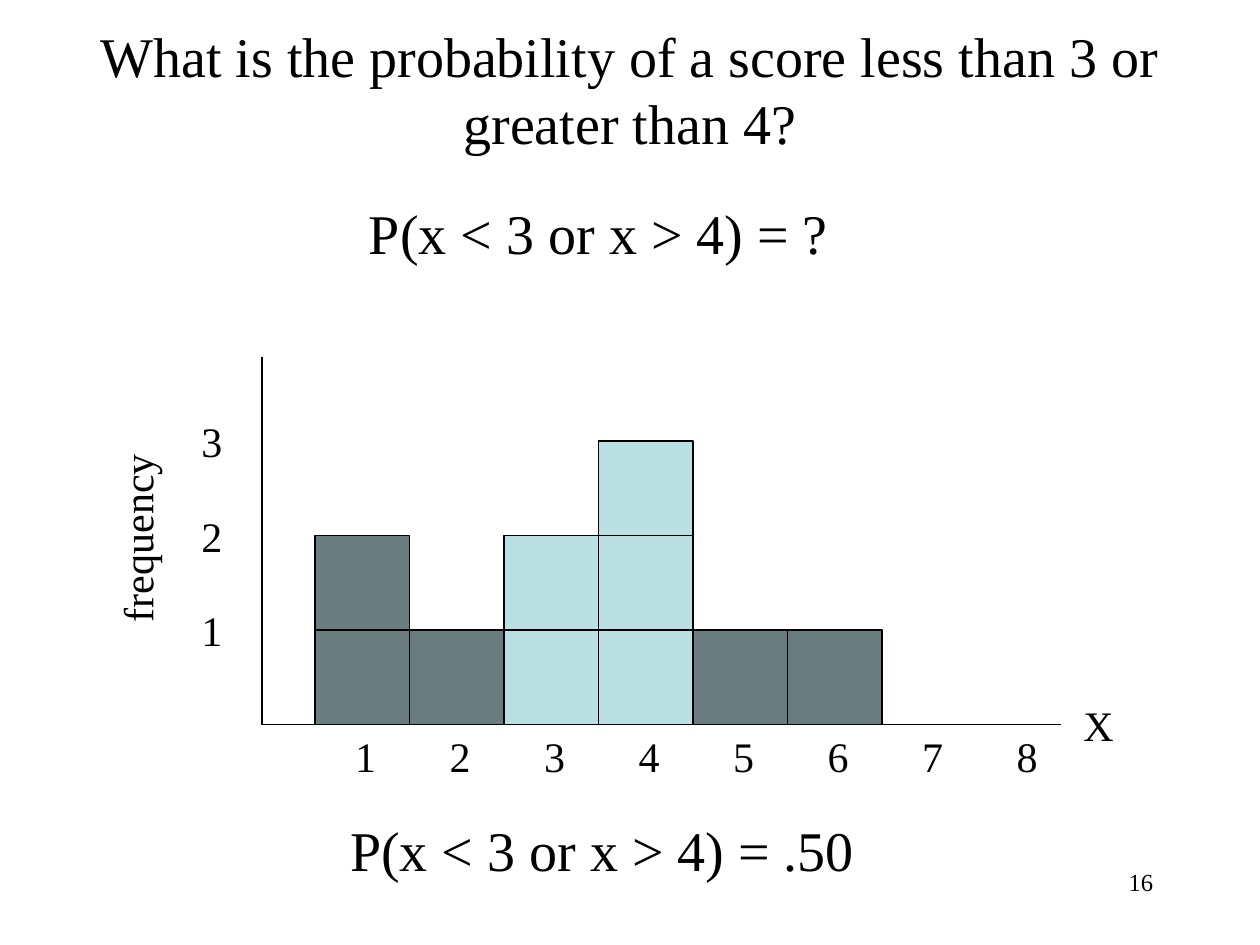
from dataclasses import dataclass

from lxml import etree
from pptx import Presentation
from pptx.dml.color import RGBColor
from pptx.enum.shapes import MSO_CONNECTOR, MSO_SHAPE
from pptx.enum.text import MSO_ANCHOR, MSO_AUTO_SIZE, PP_ALIGN
from pptx.oxml.ns import qn
from pptx.util import Inches, Pt


@dataclass(frozen=True)
class Theme:
    font: str = "Times New Roman"
    ink: RGBColor = RGBColor(0, 0, 0)
    selected: RGBColor = RGBColor(0x6A, 0x7D, 0x7E)
    other: RGBColor = RGBColor(0xBB, 0xE0, 0xE3)
    title: int = 32
    label: int = 24
    number: int = 14
    line: float = 0.75


THEME = Theme()
FREQUENCIES = {1: 2, 2: 1, 3: 2, 4: 3, 5: 1, 6: 1}
MAX_SCORE = 8


def write(sp, text, size, align=PP_ALIGN.LEFT):
    p = sp.text_frame.paragraphs[0]
    p.alignment = align
    r = p.add_run()
    r.text = text
    style = {"name": THEME.font, "size": Pt(size), "bold": False}
    for key, value in style.items():
        setattr(r.font, key, value)
    r.font.color.rgb = THEME.ink


def add_text(slide, box, text, size, wrap=False, align=PP_ALIGN.LEFT):
    sp = slide.shapes.add_textbox(*map(Inches, box))
    sp.text_frame.word_wrap = wrap
    if not wrap:
        sp.text_frame.auto_size = MSO_AUTO_SIZE.SHAPE_TO_FIT_TEXT
    write(sp, text, size, align)
    return sp


def add_title(slide, box, text):
    sp = slide.shapes.title
    for key, value in zip(("left", "top", "width", "height"), box):
        setattr(sp, key, Inches(value))
    frame = {"word_wrap": True, "auto_size": MSO_AUTO_SIZE.NONE,
             "vertical_anchor": MSO_ANCHOR.MIDDLE}
    for key, value in frame.items():
        setattr(sp.text_frame, key, value)
    write(sp, text, THEME.title, PP_ALIGN.CENTER)


def add_axis(slide, *ends):
    line = slide.shapes.add_connector(MSO_CONNECTOR.STRAIGHT, *map(Inches, ends))
    line.line.color.rgb = THEME.ink
    line.line.width = Pt(THEME.line)
    etree.SubElement(line._element.spPr, qn("a:effectLst"))


def add_unit(slide, left, top, size, fill):
    sp = slide.shapes.add_shape(MSO_SHAPE.RECTANGLE,
                                *map(Inches, (left, top, size, size)))
    sp.shadow.inherit = False
    sp.fill.solid()
    sp.fill.fore_color.rgb = fill
    sp.line.color.rgb = THEME.ink
    sp.line.width = Pt(THEME.line)


def add_histogram(slide, box, unit=0.75):
    left, top, width, height = box
    right, base = left + width, top + height
    first = left + 0.42  # left edge of the bar for score 1

    # Axes
    add_axis(slide, left, top, left, base)
    add_axis(slide, left, base, right, base)

    # One square per observation, dark where the event holds
    for score, count in FREQUENCIES.items():
        fill = THEME.selected if score < 3 or score > 4 else THEME.other
        for level in range(1, count + 1):
            add_unit(slide, first + (score - 1) * unit, base - level * unit,
                     unit, fill)

    # Scale labels
    for score in range(1, MAX_SCORE + 1):
        x = first + 0.22 + (score - 1) * unit
        add_text(slide, (x, base, 0.37, 0.5), str(score), THEME.label)
    for level in range(1, max(FREQUENCIES.values()) + 1):
        y = base - 0.25 - level * unit
        add_text(slide, (left - 0.58, y, 0.37, 0.5), str(level), THEME.label)

    # Axis names
    add_text(slide, (right + 0.08, base - 0.25, 0.44, 0.5), "X", THEME.label)
    name = add_text(slide, (left - 1.76, base - 1.73, 1.53, 0.5),
                    "frequency", THEME.label)
    name.rotation = 270


def main():
    prs = Presentation()
    prs.slide_width, prs.slide_height = Inches(10), Inches(7.5)
    slide = prs.slides.add_slide(prs.slide_layouts[5])

    add_title(slide, (0.5, 0.08, 9, 1.25),
              "What is the probability of a score less than 3 or greater than 4?")
    add_histogram(slide, (2.08, 2.83, 6.34, 2.92))

    # Question and answer
    add_text(slide, (2.83, 1.53, 3.88, 0.64), "P(x < 3 or x > 4) = ?", THEME.title)
    add_text(slide, (2.68, 6.42, 4.24, 0.64), "P(x < 3 or x > 4) = .50", THEME.title)

    # Slide number
    add_text(slide, (7.17, 6.83, 2.08, 0.5), "16", THEME.number,
             wrap=True, align=PP_ALIGN.RIGHT)
    prs.save("out.pptx")


if __name__ == "__main__":
    main()
